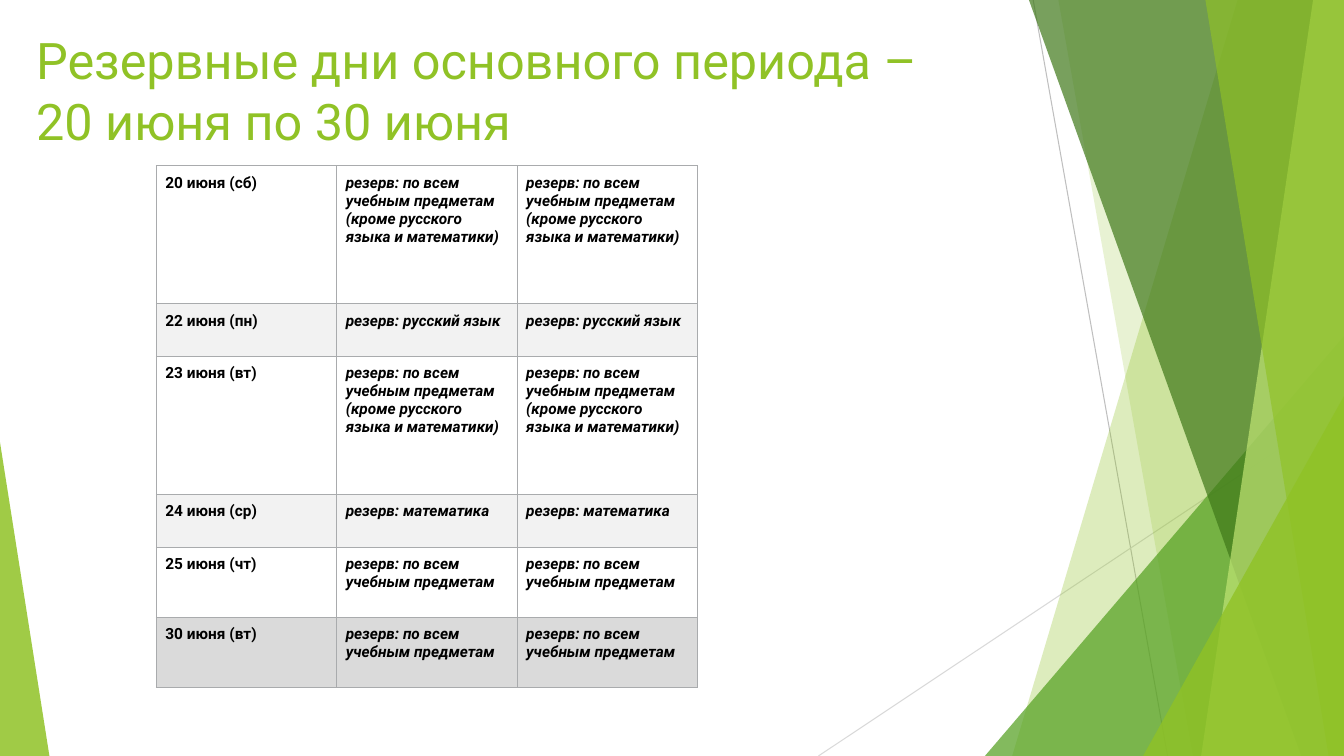
from lxml.etree import SubElement
from pptx import Presentation
from pptx.dml.color import RGBColor
from pptx.enum.shapes import MSO_CONNECTOR, MSO_SHAPE
from pptx.enum.text import MSO_ANCHOR
from pptx.oxml import parse_xml
from pptx.oxml.ns import nsdecls, qn
from pptx.util import Pt

WIDE, HIGH = 960, 540
FONT = "Roboto"
GREEN = "90C226"
MOST = "резерв: по всем учебным предметам (кроме русского языка и математики)"
EVERY = "резерв: по всем учебным предметам"
DAYS = [
    ("20 июня (сб)", MOST, 98.6, "FFFFFF"),
    ("22 июня (пн)", "резерв: русский язык", 37.6, "F2F2F2"),
    ("23 июня (вт)", MOST, 98.6, "FFFFFF"),
    ("24 июня (ср)", "резерв: математика", 37.6, "F2F2F2"),
    ("25 июня (чт)", EVERY, 50, "FFFFFF"),
    ("30 июня (вт)", EVERY, 50, "DADADA"),
]


def paint(fill, color, alpha=100):
    """Fill with a solid colour of the given opacity in percent."""
    fill.solid()
    fill.fore_color.rgb = RGBColor.from_string(color)
    if alpha < 100:
        tone = fill._xPr.find(qn("a:solidFill"))[0]
        SubElement(tone, qn("a:alpha"), val=str(alpha * 1000))


def finish(shape, color, alpha):
    """Give a shape its fill and drop its outline and shadow."""
    shape.shadow.inherit = False
    shape.line.fill.background()
    paint(shape.fill, color, alpha)


def add_line(slide, start, end, color):
    """Draw a thin straight line."""
    line = slide.shapes.add_connector(
        MSO_CONNECTOR.STRAIGHT, *[Pt(n) for n in start + end])
    paint(line.line.fill, color)
    line.line.width = Pt(0.75)
    SubElement(line._element.spPr, qn("a:effectLst"))


def add_facet(slide, top, base, color, alpha):
    """Fill the area from a slanted edge to the right side of the slide."""
    pen = slide.shapes.build_freeform(Pt(top), 0)
    pen.add_line_segments(
        [(Pt(x), Pt(y)) for x, y in [(WIDE, 0), (WIDE, HIGH), (base, HIGH)]])
    finish(pen.convert_to_shape(), color, alpha)


def add_wedge(slide, left, top, width, peak, color, alpha):
    """Draw a triangle that stands on the bottom edge of the slide."""
    wedge = slide.shapes.add_shape(
        MSO_SHAPE.ISOSCELES_TRIANGLE, Pt(left), Pt(top), Pt(width), Pt(HIGH - top))
    wedge.adjustments[0] = peak
    finish(wedge, color, alpha)


def style(para, size, color, bold=False, slant=False):
    """Set the font of a paragraph."""
    font = para.font
    font.name, font.size = FONT, Pt(size)
    font.bold, font.italic = bold, slant
    paint(font.fill, color)


def add_title(slide, text):
    """Place the slide title."""
    box = slide.shapes.add_textbox(Pt(18.7), Pt(14.4), Pt(676.8), Pt(103.7))
    frame = box.text_frame
    frame.word_wrap = True
    frame.vertical_anchor = MSO_ANCHOR.TOP
    frame.margin_top = Pt(6.5)
    frame.text = text
    style(frame.paragraphs[0], 36, GREEN)


def fill_cell(cell, text, color, slant):
    """Write a table cell with its borders and fill."""
    props = cell._tc.get_or_add_tcPr()
    for side in "LRTB":
        props.append(parse_xml(
            f'<a:ln{side} {nsdecls("a")} w="{Pt(0.75)}"><a:solidFill>'
            f'<a:srgbClr val="A9ABAD"/></a:solidFill></a:ln{side}>'))
    paint(cell.fill, color)
    cell.margin_left = cell.margin_right = Pt(6.5)
    cell.margin_top = cell.margin_bottom = Pt(5.8)
    cell.text = text
    style(cell.text_frame.paragraphs[0], 11, "000000", True, slant)


def add_days(slide):
    """Build the table of reserve days."""
    high = sum(day[2] for day in DAYS)
    table = slide.shapes.add_table(
        len(DAYS), 3, Pt(111.6), Pt(118.5), Pt(386.7), Pt(high)).table
    table.first_row = table.horz_banding = False
    for row, (date, exam, height, color) in zip(table.rows, DAYS):
        row.height = Pt(height)
        for col, text in enumerate((date, exam, exam)):
            fill_cell(row.cells[col], text, color, col > 0)


def main():
    """Build and save the slide."""
    deck = Presentation()
    deck.slide_width, deck.slide_height = Pt(WIDE), Pt(HIGH)
    slide = deck.slides.add_slide(deck.slide_layouts[6])
    add_line(slide, (738, 0), (834, HIGH), "BFBFBF")
    add_line(slide, (WIDE, 290), (584.6, HIGH), "D9D9D9")
    add_facet(slide, 884, 723, GREEN, 30)
    add_facet(slide, 756, 852, GREEN, 20)
    add_wedge(slide, 703.5, 240, 256.5, 1, "54A021", 72)
    add_facet(slide, 735, 929.5, "3F7819", 70)
    add_facet(slide, 938, 858, "C0E474", 70)
    add_facet(slide, 861, 949, GREEN, 65)
    add_wedge(slide, 816.5, 283, 143.5, 1, GREEN, 80)
    add_wedge(slide, 0, 316, 35.3, 0, GREEN, 85)
    add_title(slide, "Резервные дни основного периода – 20 июня по 30 июня")
    add_days(slide)
    deck.save("out.pptx")


if __name__ == "__main__":
    main()
